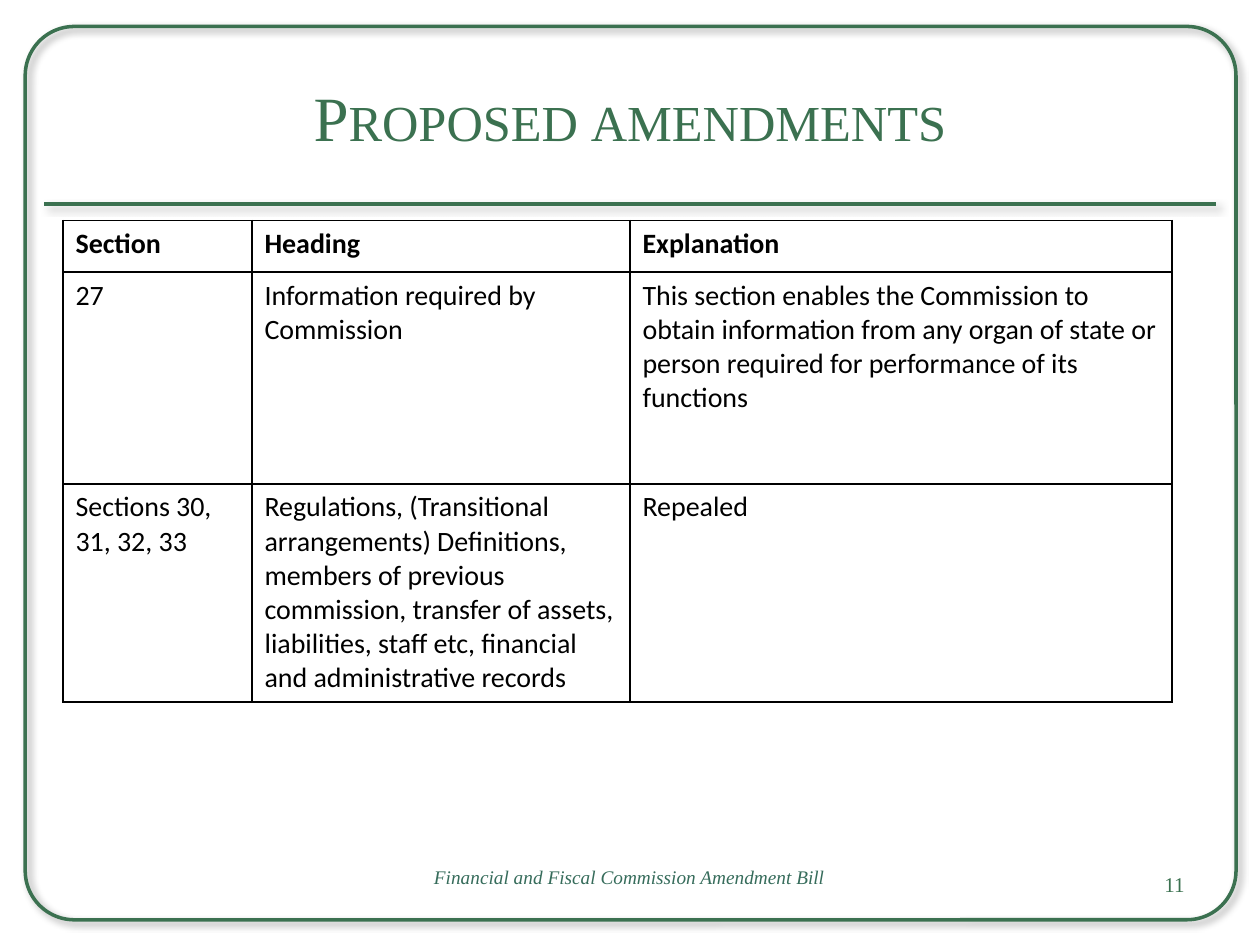
from lxml import etree
from pptx import Presentation
from pptx import util as u
from pptx.dml.color import RGBColor
from pptx.enum import shapes, text
from pptx.oxml import ns

GREEN = RGBColor(0x3B, 0x71, 0x50)
TEAL = RGBColor(0x36, 0x6C, 0x5B)
BLACK = RGBColor(0, 0, 0)
SERIF = "Times New Roman"
SANS = "Calibri"

COLUMN_WIDTHS = (1.5, 3, 4.3)
ROW_HEIGHTS = (0.41, 1.68, 1.73)
AMENDMENTS = (
    ("Section", "Heading", "Explanation"),
    ("27", "Information required by Commission",
     "This section enables the Commission to obtain information from any organ "
     "of state or person required for performance of its functions"),
    ("Sections 30, 31, 32, 33",
     "Regulations, (Transitional arrangements) Definitions, members of previous "
     "commission, transfer of assets, liabilities, staff etc, financial and "
     "administrative records",
     "Repealed"),
)


def add_child(parent, tag, **attributes):
    child = etree.SubElement(parent, ns.qn(tag))
    for key, value in attributes.items():
        child.set(key, str(value))
    return child


def box(*lengths):
    return [u.Inches(length) for length in lengths]


class SlideBuilder:
    def __init__(self, slide):
        self.slide = slide
        self.shapes = slide.shapes

    def outline(self, shape):
        shape.line.color.rgb = GREEN
        shape.line.width = u.Pt(2)
        effects = add_child(shape._element.spPr, "a:effectLst")
        shadow = add_child(effects, "a:outerShdw", blurRad=u.Pt(4), dist=u.Pt(3),
                           dir=45 * 60000, algn="tl", rotWithShape=0)
        colour = add_child(shadow, "a:srgbClr", val=BLACK)
        add_child(colour, "a:alpha", val=40000)

    def frame(self, left, top, width, height):
        border = self.shapes.add_shape(shapes.MSO_SHAPE.ROUNDED_RECTANGLE,
                                       *box(left, top, width, height))
        border.adjustments[0] = 0.055
        border.fill.background()
        self.outline(border)

    def rule(self, left, right, y):
        divider = self.shapes.add_connector(shapes.MSO_CONNECTOR.STRAIGHT,
                                            *box(left, y, right, y))
        self.outline(divider)

    def add_run(self, frame, wording, size, font, colour, align=None, bold=False, italic=False):
        paragraph = frame.paragraphs[0]
        paragraph.alignment = align
        run = paragraph.add_run()
        run.text = wording
        run.font.size = u.Pt(size)
        run.font.name = font
        run.font.color.rgb = colour
        run.font.bold = bold
        run.font.italic = italic
        return run

    def title(self, wording, left, top, width, height):
        heading = self.shapes.title
        heading.left, heading.top, heading.width, heading.height = box(left, top, width, height)
        heading.text_frame.vertical_anchor = text.MSO_ANCHOR.MIDDLE
        run = self.add_run(heading.text_frame, wording, 36, SERIF, GREEN, text.PP_ALIGN.CENTER)
        run.font._element.set("cap", "small")

    def label(self, wording, place, size, colour, align, anchor, italic=False):
        frame = self.shapes.add_textbox(*box(*place)).text_frame
        frame.word_wrap = True
        frame.vertical_anchor = anchor
        self.add_run(frame, wording, size, SERIF, colour, align, italic=italic)

    def borders(self, cell):
        properties = cell._tc.get_or_add_tcPr()
        for side in ("a:lnL", "a:lnR", "a:lnT", "a:lnB"):
            edge = add_child(properties, side, w=u.Pt(1))
            add_child(add_child(edge, "a:solidFill"), "a:srgbClr", val=BLACK)

    def table(self, rows, left, top, widths, heights):
        grid = self.shapes.add_table(len(rows), len(widths),
                                     *box(left, top, sum(widths), sum(heights))).table
        grid.first_row = grid.horz_banding = False
        for column, width in zip(grid.columns, widths):
            column.width = u.Inches(width)
        for row, height in zip(grid.rows, heights):
            row.height = u.Inches(height)
        for row_number, row in enumerate(rows):
            for column_number, wording in enumerate(row):
                cell = grid.cell(row_number, column_number)
                self.borders(cell)
                cell.fill.background()
                self.add_run(cell.text_frame, wording, 16, SANS, BLACK, bold=row_number == 0)


def main():
    deck = Presentation()
    deck.slide_width, deck.slide_height = box(10, 7.5)
    page = SlideBuilder(deck.slides.add_slide(deck.slide_layouts[5]))
    page.frame(0.2, 0.21, 9.61, 7.09)
    page.rule(0.35, 9.65, 1.62)
    page.title("Proposed amendments", 0.5, 0.3, 9, 1.25)
    page.table(AMENDMENTS, 0.5, 1.75, COLUMN_WIDTHS, ROW_HEIGHTS)
    page.label("11", (7.17, 6.82, 2.33, 0.4), 12, GREEN,
               text.PP_ALIGN.RIGHT, text.MSO_ANCHOR.MIDDLE)
    page.label("Financial and Fiscal Commission Amendment Bill", (2.95, 6.82, 4.09, 0.39),
               11, TEAL, text.PP_ALIGN.CENTER, text.MSO_ANCHOR.TOP, italic=True)
    deck.save("out.pptx")


if __name__ == "__main__":
    main()
